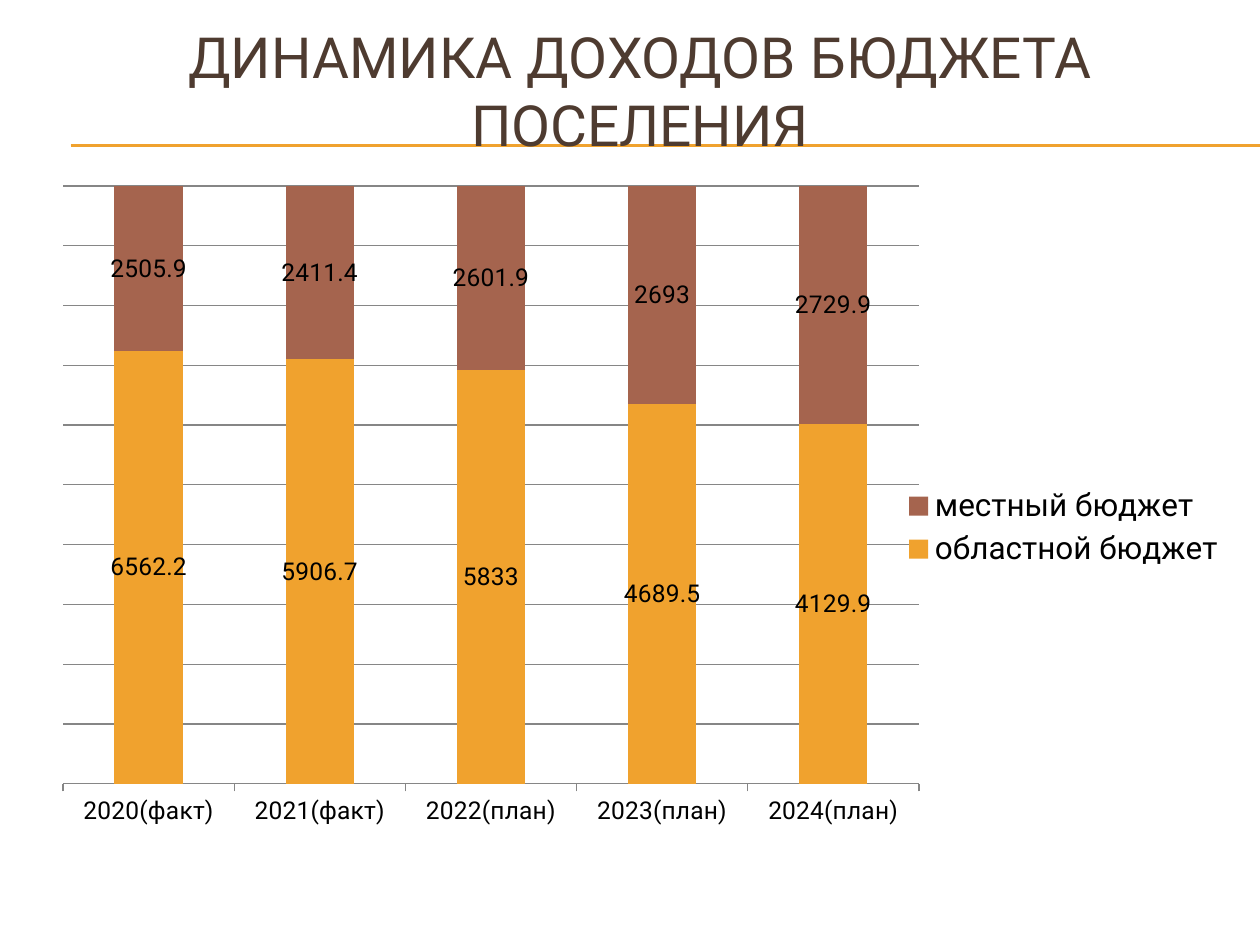
import dataclasses

import lxml.etree
import pptx
import pptx.chart.data
import pptx.dml.color
import pptx.enum.chart
import pptx.enum.shapes
import pptx.enum.text
import pptx.oxml
import pptx.oxml.ns
import pptx.util

Inches = pptx.util.Inches
Pt = pptx.util.Pt
qn = pptx.oxml.ns.qn


@dataclasses.dataclass(frozen=True)
class Theme:
    """Colours, font and type sizes of the slide."""

    font: str = "Roboto"
    title: str = "4E3B30"
    text: str = "000000"
    grid: str = "868686"
    gold: str = "F0A22E"
    brown: str = "A5644E"
    head: float = 32.4
    key: float = 18
    label: float = 14


class Deck:
    """Holds the theme and the current slide."""

    def __init__(self, theme, slide):
        """Keep the theme and the slide."""
        self.theme = theme
        self.slide = slide

    def tint(self, color):
        """Turn a hex string into a colour."""
        return pptx.dml.color.RGBColor.from_string(color)

    def style(self, font, size, color):
        """Set typeface, size and colour of a font."""
        font.name = self.theme.font
        font.size = Pt(size)
        font.color.rgb = self.tint(color)

    def rule(self, left, right, top):
        """Draw a thin level line."""
        kind = pptx.enum.shapes.MSO_CONNECTOR.STRAIGHT
        line = self.slide.shapes.add_connector(
            kind, Inches(left), Inches(top), Inches(right), Inches(top))
        line.line.color.rgb = self.tint(self.theme.gold)
        line.line.width = Pt(0.75)
        lxml.etree.SubElement(line._element.spPr, qn("a:effectLst"))

    def title(self, words, left, top, width, height):
        """Add the centred heading."""
        box = self.slide.shapes.add_textbox(
            Inches(left), Inches(top), Inches(width), Inches(height))
        frame = box.text_frame
        frame.word_wrap = True
        frame.vertical_anchor = pptx.enum.text.MSO_ANCHOR.BOTTOM
        frame.margin_bottom = Inches(0.17)
        para = frame.paragraphs[0]
        para.alignment = pptx.enum.text.PP_ALIGN.CENTER
        run = para.add_run()
        run.text = words
        self.style(run.font, self.theme.head, self.theme.title)

    def chart(self, cats, rows, left, top, width, height):
        """Add the full-stack column chart."""
        theme = self.theme
        data = pptx.chart.data.CategoryChartData()
        data.categories = cats
        for name, vals, _ in rows:
            data.add_series(name, vals)
        chart = self.slide.shapes.add_chart(
            pptx.enum.chart.XL_CHART_TYPE.COLUMN_STACKED_100,
            Inches(left), Inches(top), Inches(width), Inches(height), data).chart
        chart.has_title = False
        self.style(chart.font, theme.key, theme.text)
        plot = chart.plots[0]
        plot.vary_by_categories = False
        plot.gap_width = 150
        plot.overlap = 100
        for bar, (_, _, color) in zip(plot.series, rows):
            bar.format.fill.solid()
            bar.format.fill.fore_color.rgb = self.tint(color)
            bar.data_labels.show_value = True
            self.style(bar.data_labels.font, theme.label, theme.text)
        self.axes(chart)
        chart.has_legend = True
        chart.legend.position = pptx.enum.chart.XL_LEGEND_POSITION.RIGHT
        chart.legend.include_in_layout = False
        self.style(chart.legend.font, theme.key, theme.text)
        self.place(chart, x=0.018, y=0, w=0.715, h=0.875)

    def axes(self, chart):
        """Style the category axis and hide the value axis."""
        theme = self.theme
        base = chart.category_axis
        base.major_tick_mark = pptx.enum.chart.XL_TICK_MARK.OUTSIDE
        self.style(base.tick_labels.font, theme.label, theme.text)
        side = chart.value_axis
        side.visible = False
        side.minimum_scale = 0
        side.maximum_scale = 1
        side.major_unit = 0.1
        side.has_major_gridlines = True
        for line in (base.format.line, side.major_gridlines.format.line):
            line.color.rgb = self.tint(theme.grid)
            line.width = Pt(0.75)

    def place(self, chart, **spans):
        """Fix the inner plot area as shares of the chart."""
        area = chart._chartSpace.find(".//" + qn("c:plotArea"))
        for old in area.findall(qn("c:layout")):
            area.remove(old)
        frame = lxml.etree.Element(qn("c:layout"))
        area.insert(0, frame)
        spot = lxml.etree.SubElement(frame, qn("c:manualLayout"))
        modes = {"layoutTarget": "inner", "xMode": "edge", "yMode": "edge"}
        for tag, val in {**modes, **spans}.items():
            lxml.etree.SubElement(spot, qn("c:" + tag)).set("val", str(val))


def main():
    """Build and save the slide."""
    show = pptx.Presentation()
    show.slide_width = Inches(10)
    show.slide_height = Inches(7.5)
    theme = Theme()
    deck = Deck(theme, show.slides.add_slide(show.slide_layouts[6]))
    for top in (1.15, 1.16):
        deck.rule(0.56, 10, top)
    deck.title("ДИНАМИКА ДОХОДОВ БЮДЖЕТА ПОСЕЛЕНИЯ", 0.33, 0.5, 9.5, 0.92)
    cats = ["2020(факт)", "2021(факт)", "2022(план)", "2023(план)", "2024(план)"]
    rows = [
        ("областной бюджет", (6562.2, 5906.7, 5833, 4689.5, 4129.9), theme.gold),
        ("местный бюджет", (2505.9, 2411.4, 2601.9, 2693, 2729.9), theme.brown),
    ]
    deck.chart(cats, rows, 0.33, 1.47, 9.5, 5.43)
    show.save("out.pptx")


if __name__ == "__main__":
    main()
